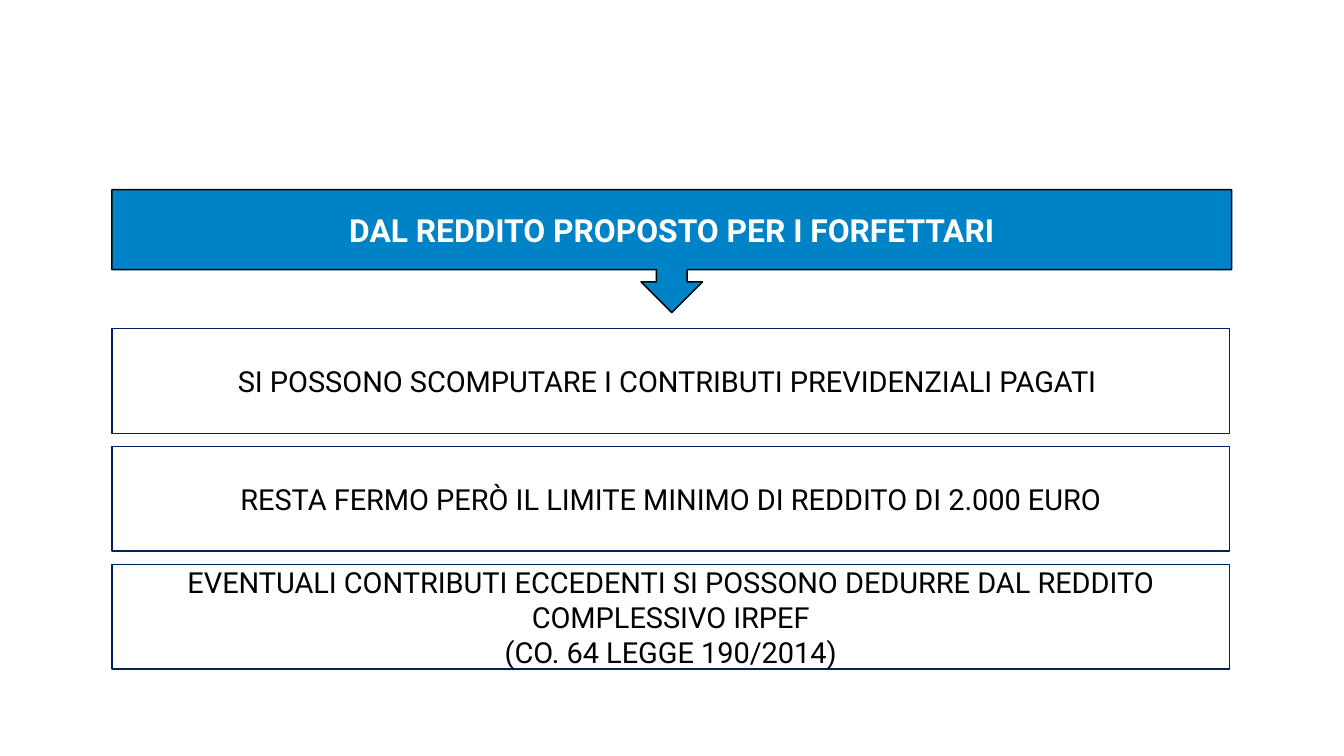
from pptx import Presentation
from pptx.dml.color import RGBColor
from pptx.enum.shapes import MSO_SHAPE
from pptx.enum.text import MSO_ANCHOR, PP_ALIGN
from pptx.util import Cm, Pt

RECTANGLE = MSO_SHAPE.RECTANGLE
ARROW_CALLOUT = MSO_SHAPE.DOWN_ARROW_CALLOUT
MIDDLE = MSO_ANCHOR.MIDDLE
CENTER = PP_ALIGN.CENTER

WHITE = RGBColor(0xFF, 0xFF, 0xFF)
BLACK = RGBColor(0x00, 0x00, 0x00)
BLUE = RGBColor(0x00, 0x82, 0xC6)
NAVY = RGBColor(0x00, 0x20, 0x60)

LEFT = 2.82
RULES_TOP = 8.28
RULE_PITCH = 2.97
RULES = [
    ["SI POSSONO SCOMPUTARE I CONTRIBUTI PREVIDENZIALI PAGATI "],
    ["RESTA FERMO PERÒ IL LIMITE MINIMO DI REDDITO DI 2.000 EURO"],
    [
        "EVENTUALI CONTRIBUTI ECCEDENTI SI POSSONO DEDURRE DAL REDDITO COMPLESSIVO IRPEF",
        "(CO. 64 LEGGE 190/2014)",
    ],
]


class SlideBuilder:
    font_name = "Roboto"
    line_width = Pt(1)

    def __init__(self, slide):
        self.slide = slide

    def add_box(self, kind, top, width, height, fill, line, lines, font_format):
        shape = self.slide.shapes.add_shape(
            kind, Cm(LEFT), Cm(top), Cm(width), Cm(height)
        )
        shape.shadow.inherit = False
        shape.fill.solid()
        shape.fill.fore_color.rgb = fill
        shape.line.color.rgb = line
        shape.line.width = self.line_width
        text_frame = shape.text_frame
        text_frame.word_wrap = True
        text_frame.vertical_anchor = MIDDLE
        text_frame.text = "\n".join(lines)
        for paragraph in text_frame.paragraphs:
            paragraph.alignment = CENTER
            self.format_font(paragraph.font, font_format)

    def format_font(self, font, font_format):
        values = {"name": self.font_name, **font_format}
        color = values.pop("color")
        for name, value in values.items():
            setattr(font, name, value)
        font.color.rgb = color

    def add_heading(self, text):
        self.add_box(
            ARROW_CALLOUT, 4.78, 28.22, 3.1, BLUE, BLACK, [text],
            {"size": Pt(22.7), "bold": True, "color": WHITE},
        )

    def add_rule(self, top, lines):
        self.add_box(
            RECTANGLE, top, 28.17, 2.64, WHITE, NAVY, lines,
            {"size": Pt(20.7), "color": BLACK},
        )


def main():
    presentation = Presentation()
    presentation.slide_width = Cm(33.87)
    presentation.slide_height = Cm(19.05)
    blank_layout = presentation.slide_layouts[6]
    builder = SlideBuilder(presentation.slides.add_slide(blank_layout))
    for index, lines in enumerate(RULES):
        builder.add_rule(RULES_TOP + index * RULE_PITCH, lines)
    builder.add_heading("DAL REDDITO PROPOSTO PER I FORFETTARI")
    presentation.save("out.pptx")


if __name__ == "__main__":
    main()
